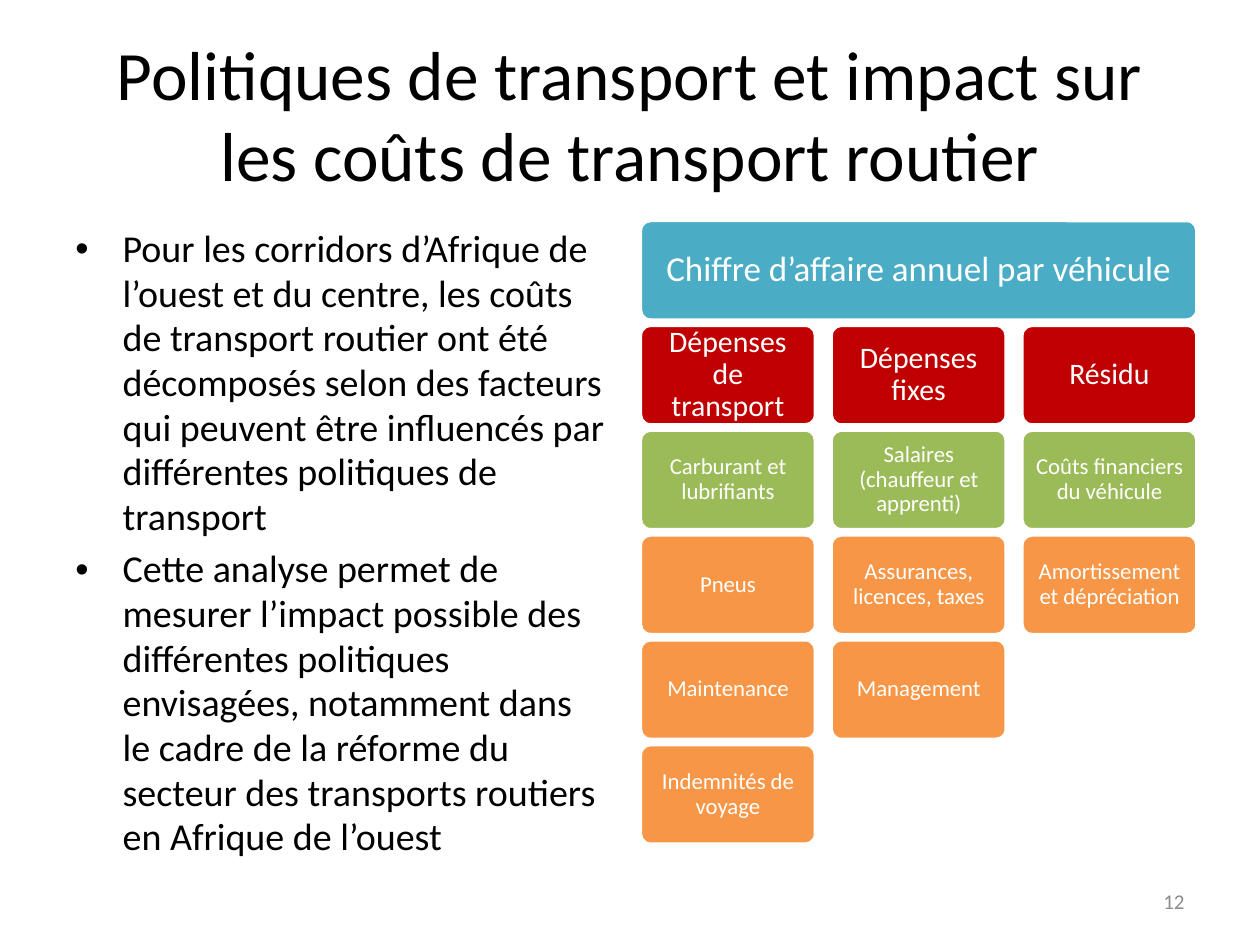
from lxml import etree
from pptx import Presentation
from pptx.dml.color import RGBColor
from pptx.enum import shapes, text
from pptx.oxml import ns
from pptx.util import Pt

LEFT, TOP = 366, 126
WIDE, HIGH = 100, 56.9
STEP, DROP = 109, 59.9
LEVELS = [("C00000", 17), ("9BBB59", 13), ("F79646", 13),
          ("F79646", 13), ("F79646", 13)]
COSTS = [
    ["Dépenses de transport", "Carburant et lubrifiants", "Pneus",
     "Maintenance", "Indemnités de voyage"],
    ["Dépenses fixes", "Salaires (chauffeur et apprenti)",
     "Assurances, licences, taxes", "Management"],
    ["Résidu", "Coûts financiers du véhicule",
     "Amortissement et dépréciation"],
]
POINTS = [
    "Pour les corridors d’Afrique de l’ouest et du centre, les coûts de "
    "transport routier ont été décomposés selon des facteurs qui peuvent "
    "être influencés par différentes politiques de transport",
    "Cette analyse permet de mesurer l’impact possible des différentes "
    "politiques envisagées, notamment dans le cadre de la réforme du "
    "secteur des transports routiers en Afrique de l’ouest",
]


def paint(hue):
    """Turn a hex string into a colour."""
    return RGBColor.from_string(hue)


def write(para, words, size, hue, align):
    """Add one styled run to a paragraph."""
    para.alignment = align
    run = para.add_run()
    run.text = words
    run.font.name = "Calibri"
    run.font.size = Pt(size)
    run.font.color.rgb = paint(hue)


def label(slide, area, words, size, hue, align):
    """Add a vertically centred line of text."""
    frame = slide.shapes.add_textbox(*map(Pt, area)).text_frame
    frame.word_wrap = True
    frame.vertical_anchor = text.MSO_ANCHOR.MIDDLE
    write(frame.paragraphs[0], words, size, hue, align)
    return frame


def bullets(slide, area, items, size):
    """Add a bulleted list."""
    frame = slide.shapes.add_textbox(*map(Pt, area)).text_frame
    frame.word_wrap = True
    for rank, item in enumerate(items):
        para = frame.add_paragraph() if rank else frame.paragraphs[0]
        props = para._p.get_or_add_pPr()
        props.set("marL", str(Pt(27)))
        props.set("indent", str(-Pt(27)))
        font = etree.SubElement(props, ns.qn("a:buFont"))
        font.set("typeface", "Arial")
        mark = etree.SubElement(props, ns.qn("a:buChar"))
        mark.set("char", "•")
        para.line_spacing = 0.98
        para.space_before = Pt(4.3 if rank else 0)
        write(para, item, size, "000000", text.PP_ALIGN.LEFT)


def tile(slide, area, words, size, hue):
    """Add a rounded box with centred white text."""
    box = slide.shapes.add_shape(
        shapes.MSO_SHAPE.ROUNDED_RECTANGLE, *map(Pt, area))
    box.adjustments[0] = 0.1
    box.shadow.inherit = False
    box.fill.solid()
    box.fill.fore_color.rgb = paint(hue)
    box.line.color.rgb = paint("FFFFFF")
    box.line.width = Pt(2)
    frame = box.text_frame
    frame.word_wrap = True
    frame.vertical_anchor = text.MSO_ANCHOR.MIDDLE
    frame.margin_left = frame.margin_right = Pt(5.5)
    frame.margin_top = frame.margin_bottom = Pt(5.5)
    para = frame.paragraphs[0]
    para.line_spacing = 0.9
    write(para, words, size, "FFFFFF", text.PP_ALIGN.CENTER)


def main():
    """Build and save the slide."""
    deck = Presentation()
    deck.slide_width, deck.slide_height = Pt(720), Pt(540)
    slide = deck.slides.add_slide(deck.slide_layouts[6])
    title = label(
        slide, (36, 21.6, 648, 90),
        "Politiques de transport et impact sur les coûts de transport routier",
        39.6, "000000", text.PP_ALIGN.CENTER)
    title.paragraphs[0].line_spacing = 0.98
    bullets(slide, (36, 126, 318, 356.4), POINTS, 21.7)
    tile(slide, (LEFT, TOP, 2 * STEP + WIDE, HIGH),
         "Chiffre d’affaire annuel par véhicule", 20, "4BACC6")
    for col, group in enumerate(COSTS):
        for row, (words, (hue, size)) in enumerate(zip(group, LEVELS), 1):
            area = (LEFT + col * STEP, TOP + row * DROP, WIDE, HIGH)
            tile(slide, area, words, size, hue)
    label(slide, (516, 500.5, 168, 28.8), "12", 12, "8C8C8C",
          text.PP_ALIGN.RIGHT)
    deck.save("out.pptx")


if __name__ == "__main__":
    main()
